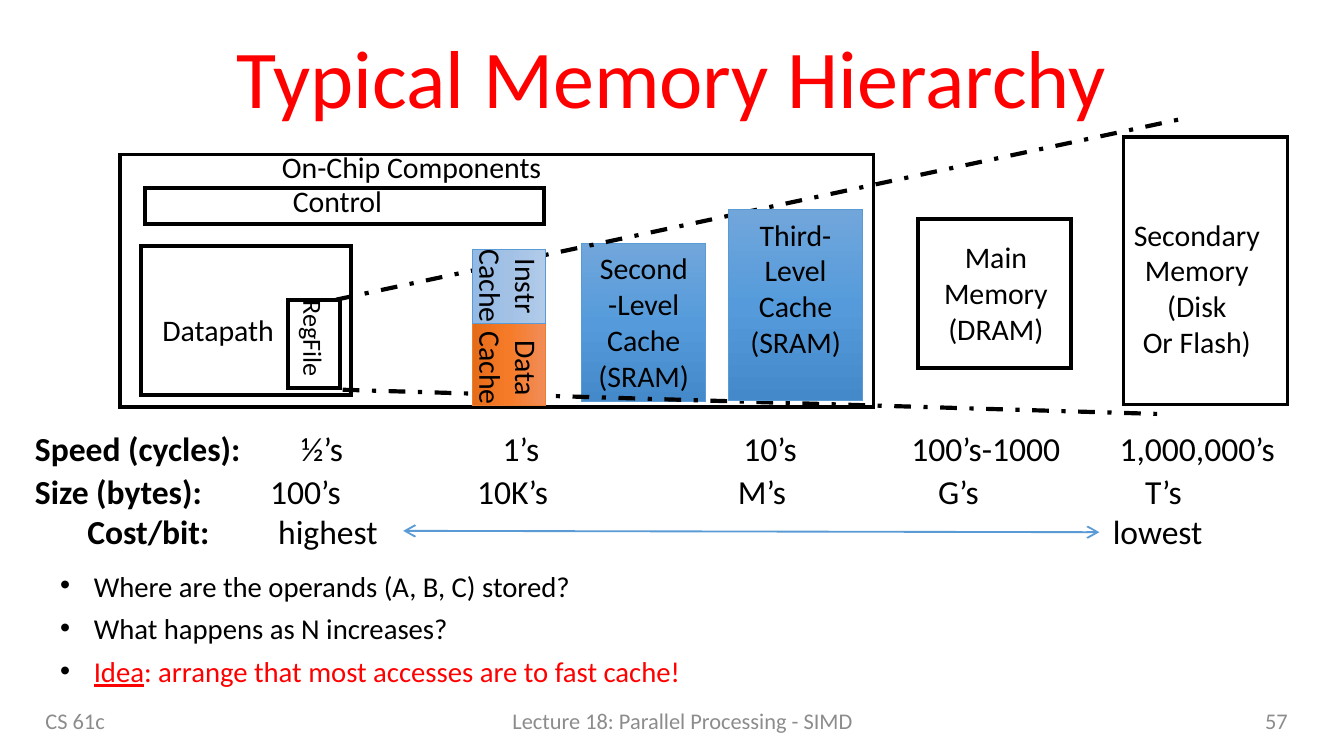
from dataclasses import dataclass
from typing import NamedTuple, Optional

from lxml import etree
from pptx import Presentation
from pptx import util as u
from pptx.dml.color import RGBColor
from pptx.enum import dml, shapes, text
from pptx.oxml import parse_xml
from pptx.oxml.ns import nsdecls, qn

LEFT, CENTER, RIGHT = text.PP_ALIGN.LEFT, text.PP_ALIGN.CENTER, text.PP_ALIGN.RIGHT
DEFAULT_INSETS = (0.1, 0.05, 0.1, 0.05)


@dataclass(frozen=True)
class Theme:
    font: str = "Calibri"
    ink: str = "000000"
    accent: str = "FF0000"
    muted: str = "8C8C8C"
    blue_line: str = "5B9BD5"
    orange_line: str = "ED7D31"
    blue: tuple = ("71A6DB", "559BDB", "448ACA")
    pale_blue: tuple = ("B1CBE9", "A3C1E5", "93B9E4")
    orange: tuple = ("F18C57", "F67B28", "E56C19")
    title: float = 44
    table: float = 18
    label: float = 16
    bullet: float = 15.4
    small: float = 14
    footer: float = 12


T = Theme()


class Run(NamedTuple):
    text: str
    color: Optional[str] = None
    bold: bool = False
    underline: bool = False


class Label(NamedTuple):
    at: tuple
    lines: tuple
    size: float = T.label
    align: int = CENTER
    wrap: bool = False
    rotation: float = 0


class Cache(NamedTuple):
    at: tuple
    lines: tuple
    stops: tuple
    line: str
    insets: tuple = DEFAULT_INSETS
    wrap: bool = True
    rotation: float = 0


class Row(NamedTuple):
    left: float
    top: float
    name: str
    cells: tuple


def write(sp, paras, *, size=T.label, color=T.ink, align=LEFT, spacing=None, before=None,
          insets=DEFAULT_INSETS, anchor=text.MSO_ANCHOR.TOP, wrap=True):
    tf = sp.text_frame
    tf.word_wrap = wrap
    tf.vertical_anchor = anchor
    tf.margin_left, tf.margin_top, tf.margin_right, tf.margin_bottom = map(u.Inches, insets)
    for i, runs in enumerate(paras):
        p = tf.add_paragraph() if i else tf.paragraphs[0]
        p.alignment = align
        p.line_spacing = spacing
        if before is not None:
            p.space_before = u.Pt(before)
        for run in [Run(runs)] if isinstance(runs, str) else runs:
            r = p.add_run()
            r.text = run.text
            r.font.name, r.font.size = T.font, u.Pt(size)
            r.font.bold, r.font.underline = run.bold, run.underline
            r.font.color.rgb = RGBColor.from_string(run.color or color)
    return tf


def add_text(s, at: tuple, paras, **fmt):
    return write(s.shapes.add_textbox(*map(u.Inches, at)), paras, **fmt)


def add_label(s, label: Label) -> None:
    sp = s.shapes.add_textbox(*map(u.Inches, label.at))
    sp.rotation = label.rotation
    write(sp, label.lines, size=label.size, align=label.align, wrap=label.wrap)


def add_box(s, at: tuple, line: str = T.ink, width: float = 2):
    sp = s.shapes.add_shape(shapes.MSO_SHAPE.RECTANGLE, *map(u.Inches, at))
    sp.shadow.inherit = False
    sp.fill.background()
    sp.line.color.rgb = RGBColor.from_string(line)
    sp.line.width = u.Pt(width)
    etree.SubElement(sp.line._get_or_add_ln(), qn("a:miter"), lim="800000")
    return sp


def add_cache(s, cache: Cache) -> None:
    sp = add_box(s, cache.at, cache.line, 0.5)
    sp.rotation = cache.rotation
    stops = "".join(f'<a:gs pos="{i * 50000}"><a:srgbClr val="{c}"/></a:gs>'
                    for i, c in enumerate(cache.stops))
    props = sp._element.spPr
    props.replace(props.find(qn("a:noFill")), parse_xml(
        f'<a:gradFill {nsdecls("a")} rotWithShape="1"><a:gsLst>{stops}</a:gsLst>'
        '<a:lin ang="5400000" scaled="0"/></a:gradFill>'))
    write(sp, cache.lines, align=CENTER, insets=cache.insets, wrap=cache.wrap)


def add_line(s, start: tuple, end: tuple, color: str, width: float, dash=None, arrows=False) -> None:
    cn = s.shapes.add_connector(shapes.MSO_CONNECTOR.STRAIGHT, *map(u.Inches, start + end))
    cn.line.color.rgb = RGBColor.from_string(color)
    cn.line.width = u.Pt(width)
    if dash:
        cn.line.dash_style = dash
    if arrows:
        for tag in ("a:headEnd", "a:tailEnd"):
            etree.SubElement(cn.line._get_or_add_ln(), qn(tag), type="arrow")
    etree.SubElement(cn._element.spPr, qn("a:effectLst"))


def add_row(s, row: Row) -> None:
    inset = 0.07
    runs = [Run(row.name, bold=True)] + [Run("\t" + value) for _, value in row.cells]
    tf = add_text(s, (row.left, row.top, 9.74 - row.left, 0.32), [runs], size=T.table,
                  spacing=0.85, insets=(inset, 0.03, inset, 0.03))
    tabs = etree.SubElement(tf.paragraphs[0]._p.get_or_add_pPr(), qn("a:tabLst"))
    for x, _ in row.cells:
        etree.SubElement(tabs, qn("a:tab"), pos=str(u.Inches(x - row.left - inset)), algn="l")


def add_bullets(s, at: tuple, paras) -> None:
    tf = add_text(s, at, paras, size=T.bullet, spacing=0.7, before=10)
    for p in tf.paragraphs:
        pr = p._p.get_or_add_pPr()
        pr.set("marL", str(u.Inches(0.25)))
        pr.set("indent", str(-u.Inches(0.25)))
        color = etree.SubElement(pr, qn("a:buClr"))
        etree.SubElement(color, qn("a:srgbClr"), val=T.ink)
        etree.SubElement(pr, qn("a:buFont"), typeface="Arial")
        etree.SubElement(pr, qn("a:buChar"), char="•")


FOOTERS = (
    ((0.24, 5.21, 2.46, 0.3), "CS 61c", LEFT),
    ((2.92, 5.21, 4.32, 0.3), "Lecture 18: Parallel Processing - SIMD", CENTER),
    ((7.43, 5.21, 2.25, 0.3), "57", RIGHT),
)
CONTROL, DATAPATH = (1.08, 1.4, 2.97, 0.27), (1.05, 1.83, 1.56, 1.11)
SECONDARY, CHIP = (8.36, 1.02, 1.22, 1.99), (0.89, 1.15, 5.61, 1.88)
REGFILE, MAIN = (2.14, 2.23, 0.39, 0.66), (6.83, 1.63, 1.14, 1.11)
LABELS = (
    Label((2.08, 1.31, 0.88, 0.37), ("Control",), align=LEFT),
    Label((1.11, 2.27, 1.05, 0.37), ("Datapath",), align=LEFT),
    Label((8.33, 1.56, 1.15, 1.18), ("Secondary", "Memory", "(Disk", "Or Flash)"), wrap=True),
    Label((2, 1.06, 2.16, 0.37), ("On-Chip Components",), align=LEFT),
    Label((1.92, 2.39, 0.83, 0.33), ("RegFile",), T.small, LEFT, True, 90),
    Label((6.92, 1.73, 0.98, 0.91), ("Main", "Memory", "(DRAM)")),
)
SECOND_LEVEL = Cache((4.33, 1.81, 0.92, 1.18), ("Second-Level", "Cache", "(SRAM)"),
                     T.blue, T.blue_line, (0.11, 0.05, 0.11, 0.05))
NEAR_CACHES = (
    Cache((3.46, 2.42, 0.65, 0.54), ("Data", "Cache"), T.orange, T.orange_line,
          (0.1, 0, 0, 0), False, 90),
    Cache((3.51, 1.86, 0.55, 0.54), ("Instr", "Cache"), T.pale_blue, T.blue_line,
          (0, 0, 0, 0), False, 90),
    Cache((5.42, 1.56, 1, 1.42), ("Third-Level", "Cache", "(SRAM)"), T.blue, T.blue_line,
          (0.1, 0.05, 0.1, 0)),
)
ROWS = (
    Row(0.19, 3.2, "Speed (cycles):", ((2.24, "½’s"), (3.74, "1’s"), (5.53, "10’s"),
                                       (6.78, "100’s-1000"), (8.33, "1,000,000’s"))),
    Row(0.19, 3.52, "Size (bytes):", ((2.01, "100’s"), (3.55, "10K’s"), (5.49, "M’s"),
                                      (6.98, "G’s"), (8.52, "T’s"))),
    Row(0.58, 3.82, "Cost/bit:", ((2.07, "highest"), (8.28, "lowest"))),
)
QUESTIONS = (
    "Where are the operands (A, B, C) stored?",
    "What happens as N increases?",
    (Run("Idea", T.accent, underline=True),
     Run(": arrange that most accesses are to fast cache!", T.accent)),
)


def main() -> None:
    prs = Presentation()
    prs.slide_width = u.Inches(10)
    prs.slide_height = u.Inches(10 * 9 / 16)
    s = prs.slides.add_slide(prs.slide_layouts[6])
    for at, words, align in FOOTERS:
        add_text(s, at, [words], size=T.footer, color=T.muted, align=align,
                 anchor=text.MSO_ANCHOR.MIDDLE)
    add_cache(s, SECOND_LEVEL)
    add_text(s, (0.5, 0.23, 9, 0.94), ["Typical Memory Hierarchy"], size=T.title,
             color=T.accent, align=CENTER, spacing=0.9)
    for at in (CONTROL, DATAPATH, SECONDARY, CHIP, REGFILE, MAIN):
        add_box(s, at)
    for start, end in (((2.5, 2.23), (8.77, 0.89)), ((2.55, 2.9), (8.61, 3.08))):
        add_line(s, start, end, T.ink, 2.25, dash=dml.MSO_LINE.DASH_DOT)
    for label in LABELS:
        add_label(s, label)
    for cache in NEAR_CACHES:
        add_cache(s, cache)
    for row in ROWS:
        add_row(s, row)
    add_line(s, (3, 3.95), (8.18, 3.96), T.blue_line, 1, arrows=True)
    add_bullets(s, (0.35, 4.25, 9, 0.98), QUESTIONS)
    prs.save("out.pptx")


if __name__ == "__main__":
    main()
